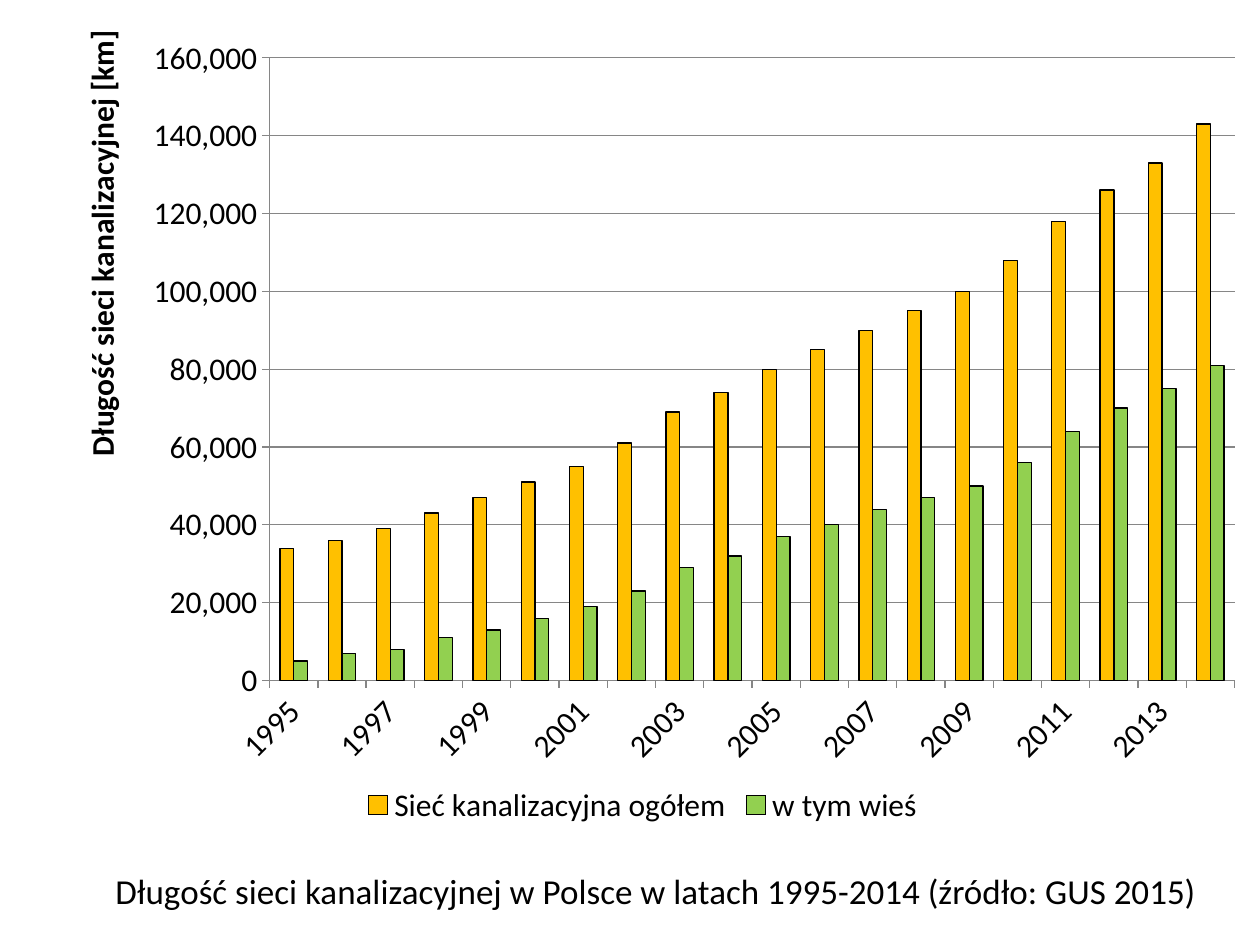
from pptx import Presentation
from pptx.chart.data import CategoryChartData
from pptx.dml.color import RGBColor
from pptx.enum.chart import XL_CHART_TYPE as Kind
from pptx.enum.chart import XL_LEGEND_POSITION as Place
from pptx.enum.chart import XL_TICK_MARK as Tick
from pptx.enum.text import MSO_ANCHOR as Anchor
from pptx.enum.text import PP_ALIGN as Align
from pptx.oxml import parse_xml
from pptx.oxml.ns import nsdecls, qn
from pptx.util import Cm, Pt

BLACK = RGBColor(0, 0, 0)
GRAY = RGBColor(0x86, 0x86, 0x86)
AMBER = RGBColor(0xFF, 0xC0, 0x00)
GREEN = RGBColor(0x92, 0xD0, 0x50)
FONT = "Calibri"

YEARS = [str(year) for year in range(1995, 2015)]
# Sewer length in thousands of km per year
SERIES = [
    ("Sieć kanalizacyjna ogółem", AMBER,
     [34, 36, 39, 43, 47, 51, 55, 61, 69, 74,
      80, 85, 90, 95, 100, 108, 118, 126, 133, 143]),
    ("w tym wieś", GREEN,
     [5, 7, 8, 11, 13, 16, 19, 23, 29, 32,
      37, 40, 44, 47, 50, 56, 64, 70, 75, 81]),
]


def style(font, size, bold=False):
    font.name = FONT
    font.size = Pt(size)
    font.bold = bold
    font.color.rgb = BLACK


def lay_out(node, index, **parts):
    """Give a chart part a manual layout, as its child number index."""
    for old in node.findall(qn("c:layout")):
        node.remove(old)
    rows = "".join(f'<c:{key} val="{val}"/>' for key, val in parts.items())
    node.insert(index, parse_xml(
        f'<c:layout {nsdecls("c")}><c:manualLayout>{rows}'
        '</c:manualLayout></c:layout>'))


def turn(node, angle):
    """Rotate the text below a chart node by an angle in degrees."""
    body = next(node.iter(qn("a:bodyPr")))
    body.set("rot", str(angle * 60000))
    body.set("vert", "horz")


def set_axis(axis):
    axis.major_tick_mark = Tick.OUTSIDE
    axis.minor_tick_mark = Tick.NONE
    axis.format.line.color.rgb = GRAY
    style(axis.tick_labels.font, 18)


def set_years(axis):
    """Slant the year labels and show every second one."""
    set_axis(axis)
    node = axis.tick_labels.font and axis._element
    turn(node.find(qn("c:txPr")), -45)
    skip = parse_xml(f'<c:tickLblSkip {nsdecls("c")} val="2"/>')
    node.find(qn("c:noMultiLvlLbl")).addprevious(skip)


def set_lengths(axis):
    set_axis(axis)
    axis.has_major_gridlines = True
    axis.major_gridlines.format.line.color.rgb = GRAY
    axis.tick_labels.number_format = "#,##0"
    axis.tick_labels.number_format_is_linked = False
    frame = axis.axis_title.text_frame
    frame.text = "Długość sieci kanalizacyjnej [km]"
    style(frame.paragraphs[0].runs[0].font, 18, bold=True)
    title = axis._element.find(qn("c:title"))
    turn(title, -90)
    lay_out(title, 1, xMode="edge", yMode="edge", x=0.02, y=0.01)


def add_bars(slide):
    data = CategoryChartData(number_format="#,##0")
    data.categories = YEARS
    for name, _, vals in SERIES:
        data.add_series(name, [val * 1000 for val in vals])
    chart = slide.shapes.add_chart(
        Kind.COLUMN_CLUSTERED, Cm(1.02), Cm(0.33), Cm(23.88), Cm(16.41),
        data).chart
    style(chart.font, 18)
    chart.has_title = False
    chart.has_legend = True
    chart.legend.position = Place.BOTTOM
    chart.legend.include_in_layout = False
    style(chart.legend.font, 18)

    plot = chart.plots[0]
    plot.gap_width = 150
    plot.overlap = 0
    plot.vary_by_categories = False
    for bars, (_, color, _) in zip(plot.series, SERIES):
        bars.format.fill.solid()
        bars.format.fill.fore_color.rgb = color
        bars.format.line.color.rgb = BLACK
        bars.format.line.width = Pt(0.75)

    set_years(chart.category_axis)
    set_lengths(chart.value_axis)
    area = next(chart._chartSpace.iter(qn("c:plotArea")))
    lay_out(area, 0, layoutTarget="inner", xMode="edge", yMode="edge",
            x=0.185, y=0.051, w=0.815, h=0.765)


def add_caption(slide, text):
    box = slide.shapes.add_textbox(Cm(1.02), Cm(16.94), Cm(24.41), Cm(2.01))
    frame = box.text_frame
    frame.word_wrap = True
    frame.vertical_anchor = Anchor.MIDDLE
    frame.text = text
    line = frame.paragraphs[0]
    line.alignment = Align.CENTER
    style(line.runs[0].font, 20)


def main():
    deck = Presentation()
    deck.slide_width, deck.slide_height = Cm(25.4), Cm(19.05)
    slide = deck.slides.add_slide(deck.slide_layouts[6])
    add_caption(slide, "Długość sieci kanalizacyjnej w Polsce "
                       "w latach 1995-2014 (źródło: GUS 2015)")
    add_bars(slide)
    deck.save("out.pptx")


if __name__ == "__main__":
    main()
